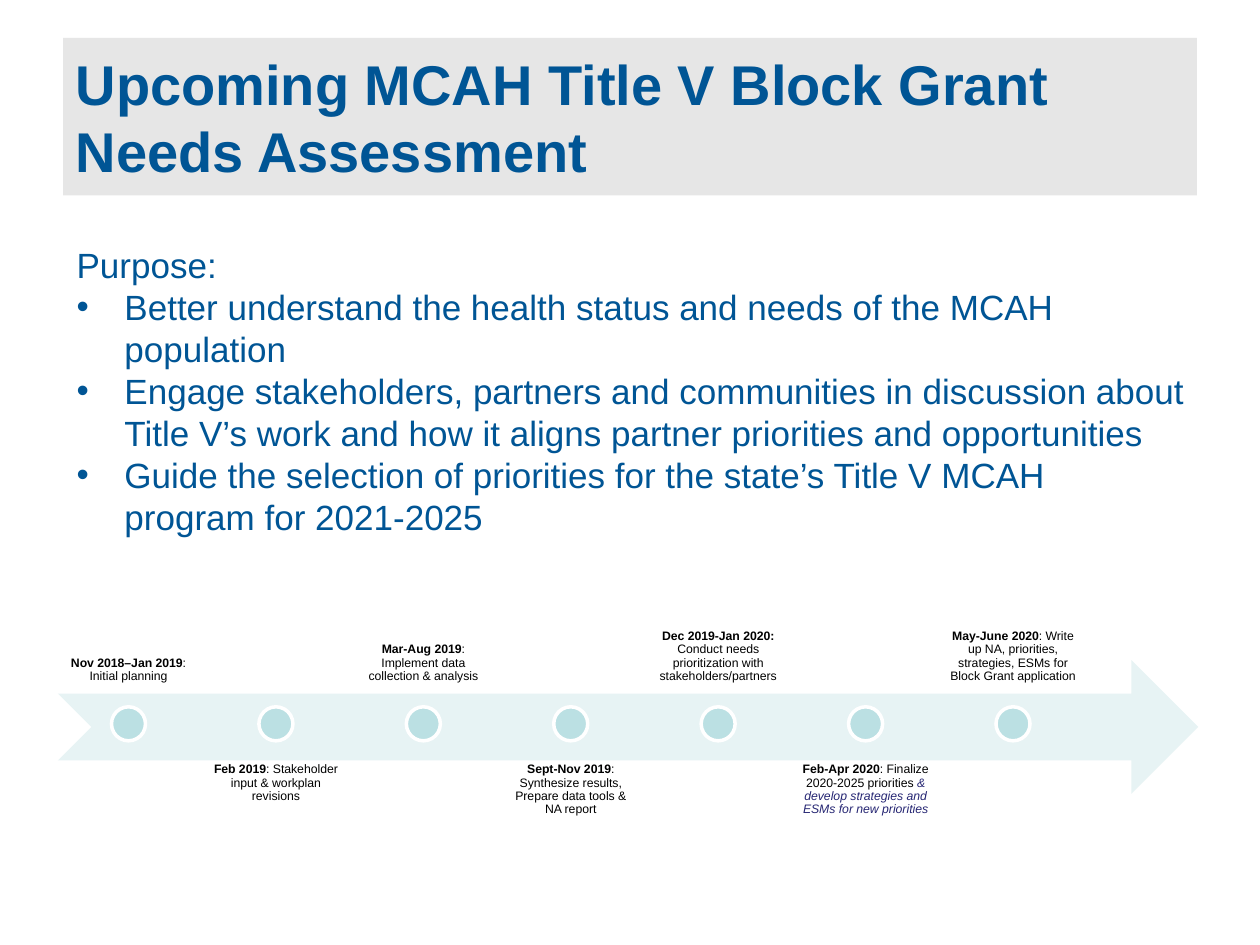
from dataclasses import dataclass

import pptx
import pptx.dml.color
import pptx.enum.shapes
import pptx.enum.text
import pptx.oxml
import pptx.oxml.ns
import pptx.util
from pptx.util import Inches

ALIGN = pptx.enum.text.PP_ALIGN
ANCHOR = pptx.enum.text.MSO_ANCHOR
SHAPE = pptx.enum.shapes.MSO_SHAPE


@dataclass(frozen=True)
class Theme:
    font: str = "Arial"
    heading: str = "005595"
    banner: str = "E6E6E6"
    arrow: str = "E7F3F4"
    marker: str = "BBE0E3"
    marker_line: str = "FFFFFF"
    label: str = "000000"
    emphasis: str = "262673"
    title_size: float = 32
    body_size: float = 20
    label_size: float = 7


def rgb(value):
    return pptx.dml.color.RGBColor.from_string(value)


class SlideBuilder:
    def __init__(self, slide, theme):
        self.slide = slide
        self.theme = theme

    def add_run(self, paragraph, text, size, color, bold=False, italic=False):
        run = paragraph.add_run()
        run.text = text
        font = run.font
        font.name = self.theme.font
        font.size = pptx.util.Pt(size)
        font.color.rgb = rgb(color)
        font.bold = bold
        font.italic = italic

    def add_bullet(self, paragraph, indent):
        properties = paragraph._p.get_or_add_pPr()
        properties.set("marL", str(indent))
        properties.set("indent", str(-indent))
        namespace = pptx.oxml.ns.nsdecls("a")
        for xml in (
            f'<a:buClr {namespace}><a:srgbClr val="{self.theme.heading}"/></a:buClr>',
            f'<a:buFont {namespace} typeface="{self.theme.font}"/>',
            f'<a:buChar {namespace} char="•"/>',
        ):
            properties.append(pptx.oxml.parse_xml(xml))

    def add_title(self, text, left, top, width, height):
        title = self.slide.shapes.title
        title.left, title.top, title.width, title.height = left, top, width, height
        title.fill.solid()
        title.fill.fore_color.rgb = rgb(self.theme.banner)
        frame = title.text_frame
        frame.auto_size = pptx.enum.text.MSO_AUTO_SIZE.NONE
        frame.vertical_anchor = ANCHOR.MIDDLE
        paragraph = frame.paragraphs[0]
        paragraph.alignment = ALIGN.LEFT
        self.add_run(paragraph, text, self.theme.title_size, self.theme.heading, bold=True)

    def add_text_frame(self, left, top, width, height, anchor=ANCHOR.TOP):
        frame = self.slide.shapes.add_textbox(left, top, width, height).text_frame
        frame.word_wrap = True
        frame.vertical_anchor = anchor
        return frame

    def add_purpose(self, heading, goals, left, top, width, height):
        frame = self.add_text_frame(left, top, width, height)
        size, color = self.theme.body_size, self.theme.heading
        self.add_run(frame.paragraphs[0], heading, size, color)
        for goal in goals:
            paragraph = frame.add_paragraph()
            self.add_bullet(paragraph, Inches(0.38))
            self.add_run(paragraph, goal, size, color)

    def add_shape(self, kind, left, top, width, height, fill, line=None):
        shape = self.slide.shapes.add_shape(kind, left, top, width, height)
        shape.shadow.inherit = False
        shape.fill.solid()
        shape.fill.fore_color.rgb = rgb(fill)
        if line:
            shape.line.color.rgb = rgb(line)
            shape.line.width = pptx.util.Pt(2)
        else:
            shape.line.fill.background()

    def add_label(self, left, top, width, height, anchor, date, task, emphasis):
        frame = self.add_text_frame(left, top, width, height, anchor)
        frame.margin_left = frame.margin_right = Inches(0.05)
        paragraph = frame.paragraphs[0]
        paragraph.alignment = ALIGN.CENTER
        paragraph.line_spacing = 0.9
        size, color = self.theme.label_size, self.theme.label
        self.add_run(paragraph, date, size, color, bold=True)
        self.add_run(paragraph, task, size, color)
        if emphasis:
            self.add_run(paragraph, emphasis, size, self.theme.emphasis, italic=True)

    def add_timeline(self, milestones):
        """Place markers along an arrow, with labels alternating above and below."""
        theme = self.theme
        left, step = Inches(0.46), Inches(1.17)
        label_width, label_height = Inches(1.12), Inches(1.06)
        marker = Inches(0.27)
        self.add_shape(SHAPE.NOTCHED_RIGHT_ARROW, left, Inches(5.24),
                       Inches(9.05), Inches(1.06), theme.arrow)
        for index, (date, task, emphasis) in enumerate(milestones):
            label_left = left + index * step
            above = index % 2 == 0
            top, anchor = (4.41, ANCHOR.BOTTOM) if above else (6.01, ANCHOR.TOP)
            self.add_label(label_left, Inches(top), label_width, label_height,
                           anchor, date, task, emphasis)
            marker_left = label_left + (label_width - marker) // 2
            self.add_shape(SHAPE.OVAL, marker_left, Inches(5.61), marker, marker,
                           theme.marker, theme.marker_line)


GOALS = [
    "Better understand the health status and needs of the MCAH population",
    "Engage stakeholders, partners and communities in discussion about "
    "Title V’s work and how it aligns partner priorities and opportunities",
    "Guide the selection of priorities for the state’s Title V MCAH "
    "program for 2021-2025",
]

MILESTONES = [
    ("Nov 2018–Jan 2019", ": Initial planning", ""),
    ("Feb 2019", ": Stakeholder input & workplan revisions", ""),
    ("Mar-Aug 2019", ": Implement data collection & analysis", ""),
    ("Sept-Nov 2019", ": Synthesize results, Prepare data tools & NA report", ""),
    ("Dec 2019-Jan 2020:", " Conduct needs prioritization with stakeholders/partners", ""),
    ("Feb-Apr 2020", ": Finalize 2020-2025 priorities ",
     "& develop strategies and ESMs for new priorities"),
    ("May-June 2020",
     ": Write up NA, priorities, strategies, ESMs for Block Grant application", ""),
]


def main():
    presentation = pptx.Presentation()
    presentation.slide_width = Inches(10)
    presentation.slide_height = Inches(7.5)
    title_only = presentation.slide_layouts.get_by_name("Title Only")
    builder = SlideBuilder(presentation.slides.add_slide(title_only), Theme())
    builder.add_title("Upcoming MCAH Title V Block Grant Needs Assessment",
                      Inches(0.5), Inches(0.3), Inches(9), Inches(1.25))
    builder.add_purpose("Purpose:", GOALS,
                        Inches(0.51), Inches(1.88), Inches(9), Inches(4.5))
    builder.add_timeline(MILESTONES)
    presentation.save("out.pptx")


if __name__ == "__main__":
    main()
